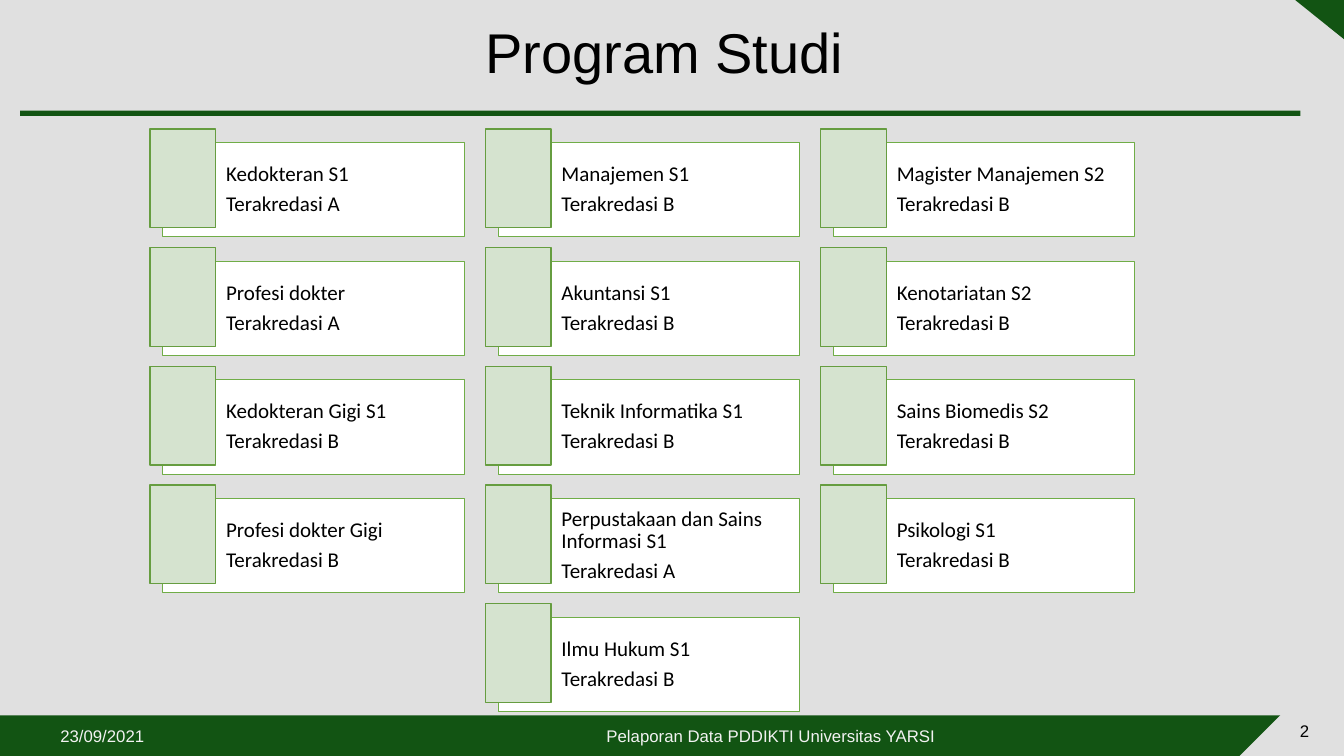
from pptx import Presentation
from pptx.dml.color import RGBColor
from pptx.enum.shapes import MSO_SHAPE
from pptx.enum.text import MSO_ANCHOR, MSO_AUTO_SIZE, PP_ALIGN
from pptx.util import Cm, Pt

RECT, TRIANGLE = MSO_SHAPE.RECTANGLE, MSO_SHAPE.RIGHT_TRIANGLE
MIDDLE = MSO_ANCHOR.MIDDLE
LEFT, CENTER = PP_ALIGN.LEFT, PP_ALIGN.CENTER
NO_FIT = MSO_AUTO_SIZE.NONE

GREEN, GREY, BLACK, WHITE = "125413", "E0E0E0", "000000", "FFFFFF"
PALE, CARD_LINE, TILE_LINE, FOOTER_TEXT = "D5E3CF", "70AD47", "669D40", "F2F2F2"
SLIDE_W, SLIDE_H = 33.87, 19.05

PROGRAMS = [
    [("Kedokteran S1", "A"), ("Profesi dokter", "A"),
     ("Kedokteran Gigi S1", "B"), ("Profesi dokter Gigi", "B")],
    [("Manajemen S1", "B"), ("Akuntansi S1", "B"), ("Teknik Informatika S1", "B"),
     ("Perpustakaan dan Sains Informasi S1", "A"), ("Ilmu Hukum S1", "B")],
    [("Magister Manajemen S2", "B"), ("Kenotariatan S2", "B"),
     ("Sains Biomedis S2", "B"), ("Psikologi S1", "B")],
]


def color(hex_code):
    return RGBColor.from_string(hex_code)


def add_box(s, kind, x, y, w, h, fill, line=None, line_width=1, rotation=0):
    """Add a filled preset shape; lengths in centimetres."""
    sp = s.shapes.add_shape(kind, Cm(x), Cm(y), Cm(w), Cm(h))
    sp.shadow.inherit = False
    sp.rotation = rotation
    sp.fill.solid()
    sp.fill.fore_color.rgb = color(fill)
    if line:
        sp.line.color.rgb = color(line)
        sp.line.width = Pt(line_width)
    else:
        sp.line.fill.background()
    return sp


def write(sp, lines, size, font, ink=BLACK, align=LEFT, spacing=None, after=0):
    tf = sp.text_frame
    tf.word_wrap = True
    tf.auto_size = NO_FIT
    tf.vertical_anchor = MIDDLE
    tf.text = "\n".join(lines)
    for p in tf.paragraphs:
        p.alignment = align
        p.line_spacing = spacing
        p.space_after = Pt(after)
        p.font.size = Pt(size)
        p.font.name = font
        p.font.color.rgb = color(ink)


def add_header(s, x, y, w, h):
    """Title, rule along the bottom edge and the corner triangle."""
    add_box(s, TRIANGLE, x + w - 1.23, y, 1.27, 1.02, GREEN, rotation=180)
    add_box(s, RECT, x + 0.51, y + h - 0.13, w - 1.61, 0.13, GREEN)
    title = s.shapes.title
    title.left, title.top = Cm(x + 9.14), Cm(y + 0.25)
    title.width, title.height = Cm(15.19), Cm(2.29)
    write(title, ["Program Studi"], 40, "Arial", align=CENTER, spacing=0.9)


def add_footer(s, x, y, w, h):
    """Green band with a slanted end, date, caption and page number."""
    number_x = x + w - 1.36
    add_box(s, RECT, x, y + 0.25, w, h - 0.25, GREEN)
    add_box(s, TRIANGLE, number_x - 1.27, y, 1.27, h, GREY, rotation=270)
    number = add_box(s, RECT, number_x, y, 1.36, h, GREY)
    write(number, ["2"], 12, "Arial")
    for text, left, width, align in [
        ("23/09/2021", 1.27, 6.35, LEFT),
        ("Pelaporan Data PDDIKTI Universitas YARSI", 8.89, 21.08, CENTER),
    ]:
        sp = s.shapes.add_textbox(Cm(x + left), Cm(y + 0.51), Cm(width), Cm(0.51))
        write(sp, [text], 12, "Arial", FOOTER_TEXT, align)


def add_card(s, x, y, w, h, name, grade):
    """White panel with a pale tile overlapping its top left corner."""
    dx, dy = 0.32, 0.34
    panel = add_box(s, RECT, x + dx, y + dy, w - dx, h - dy, WHITE, CARD_LINE, 0.5)
    tf = panel.text_frame
    tf.margin_left = Cm(1.6)
    tf.margin_top = tf.margin_right = tf.margin_bottom = Cm(0.15)
    write(panel, [name, f"Terakredasi {grade}"], 15, "Calibri", spacing=0.9, after=5.25)
    add_box(s, RECT, x, y, 1.66, 2.49, PALE, TILE_LINE)


def add_programs(s, x, y, w, h):
    gap_x, gap_y = 0.53, 0.27
    columns, rows = len(PROGRAMS), max(map(len, PROGRAMS))
    card_w = (w - (columns - 1) * gap_x) / columns
    card_h = (h - (rows - 1) * gap_y) / rows
    for i, column in enumerate(PROGRAMS):
        for j, (name, grade) in enumerate(column):
            add_card(s, x + i * (card_w + gap_x), y + j * (card_h + gap_y),
                     card_w, card_h, name, grade)


def main():
    prs = Presentation()
    prs.slide_width, prs.slide_height = Cm(SLIDE_W), Cm(SLIDE_H)
    s = prs.slides.add_slide(prs.slide_layouts[5])
    s.background.fill.solid()
    s.background.fill.fore_color.rgb = color(GREY)
    add_header(s, 0, 0, SLIDE_W, 2.92)
    add_footer(s, 0, 17.78, SLIDE_W, 1.27)
    add_programs(s, 3.78, 3.25, 24.82, 14.68)
    prs.save("out.pptx")


if __name__ == "__main__":
    main()
